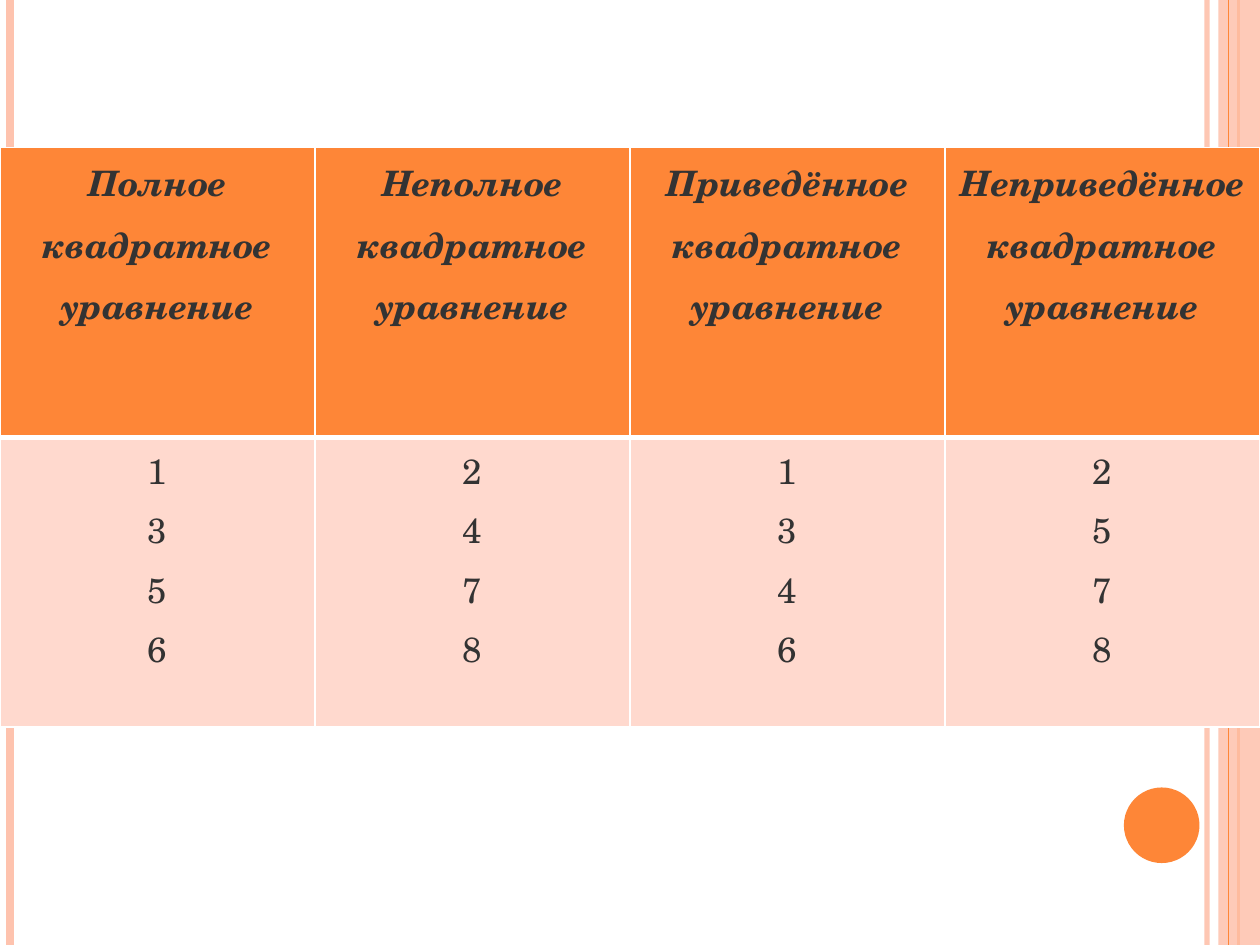
from lxml import etree
from pptx import Presentation
from pptx.dml.color import RGBColor
from pptx.enum import shapes, text
from pptx.oxml import ns
from pptx.util import Inches, Pt

COLORS = {"orange": "FE8637", "peach": "FEC3AE", "pale": "FFD9CE",
          "white": "FFFFFF", "ink": "333333"}
FONT = "TeX Gyre Schola"
WIDTH, HEIGHT = 10, 7.5

COLUMNS = [
    ("Полное квадратное уравнение", "1356"),
    ("Неполное квадратное уравнение", "2478"),
    ("Приведённое квадратное уравнение", "1346"),
    ("Неприведённое квадратное уравнение", "2578"),
]
TABLE_TOP, ROW_HEIGHT = 1.17, 2.3

# x, colour, width in points, opacity in percent
BACK_STRIPES = [(9.58, "peach", 3, 93), (0.08, "peach", 4.5, 100),
                (9.83, "orange", 1.5, 100)]
FRONT_STRIPES = [(9.75, "orange", 0.75, 100)]


def rgb(name):
    return RGBColor.from_string(COLORS[name])


def child(parent, tag, **attributes):
    return etree.SubElement(parent, ns.qn(tag), attributes)


def set_opacity(shape, percent):
    for color in shape._element.spPr.iter(ns.qn("a:srgbClr")):
        child(color, "a:alpha", val=str(percent * 1000))


def add_stripe(page, x, color, width, opacity):
    stripe = page.shapes.add_connector(
        shapes.MSO_CONNECTOR.STRAIGHT, Inches(x), 0, Inches(x), Inches(HEIGHT))
    stripe.line.color.rgb = rgb(color)
    stripe.line.width = Pt(width)
    if opacity < 100:
        set_opacity(stripe, opacity)
    child(stripe._element.spPr, "a:effectLst")


def add_plain_shape(page, kind, box, color):
    shape = page.shapes.add_shape(kind, *map(Inches, box))
    shape.shadow.inherit = False
    shape.fill.solid()
    shape.fill.fore_color.rgb = rgb(color)
    shape.line.fill.background()
    return shape


def set_borders(cell, **widths):
    """Draw white borders; widths in points are keyed L, R, T, B."""
    properties = cell._tc.get_or_add_tcPr()
    for side, width in widths.items():
        line = child(properties, f"a:ln{side}", w=str(Pt(width)))
        child(child(line, "a:solidFill"), "a:srgbClr", val=COLORS["white"])


def fill_cell(cell, lines, fill, bold=False, top=1, bottom=1):
    set_borders(cell, L=1, R=1, T=top, B=bottom)
    cell.fill.solid()
    cell.fill.fore_color.rgb = rgb(fill)
    cell.margin_left = cell.margin_right = Inches(0.07)
    cell.margin_top = cell.margin_bottom = 0
    frame = cell.text_frame
    frame.text = "\n".join(lines)
    for para in frame.paragraphs:
        para.alignment = text.PP_ALIGN.CENTER
        para.line_spacing = 1.15
        for span in para.runs:
            span.font.name = FONT
            span.font.size = Pt(20)
            span.font.bold = span.font.italic = bold
            span.font.color.rgb = rgb("ink")


def add_equation_table(page):
    table = page.shapes.add_table(
        2, len(COLUMNS), 0, Inches(TABLE_TOP),
        Inches(WIDTH), Inches(2 * ROW_HEIGHT)).table
    for column, (heading, numbers) in enumerate(COLUMNS):
        fill_cell(table.cell(0, column), [heading], "orange", bold=True, bottom=3)
        fill_cell(table.cell(1, column), numbers, "pale", top=3)


def main():
    deck = Presentation()
    deck.slide_width, deck.slide_height = Inches(WIDTH), Inches(HEIGHT)
    page = deck.slides.add_slide(deck.slide_layouts[6])
    for stripe in BACK_STRIPES:
        add_stripe(page, *stripe)
    band = add_plain_shape(page, shapes.MSO_SHAPE.RECTANGLE,
                           (9.67, 0, 0.33, HEIGHT), "peach")
    set_opacity(band, 87)
    for stripe in FRONT_STRIPES:
        add_stripe(page, *stripe)
    add_plain_shape(page, shapes.MSO_SHAPE.OVAL, (8.92, 6.25, 0.6, 0.6), "orange")
    add_equation_table(page)
    deck.save("out.pptx")


if __name__ == "__main__":
    main()
